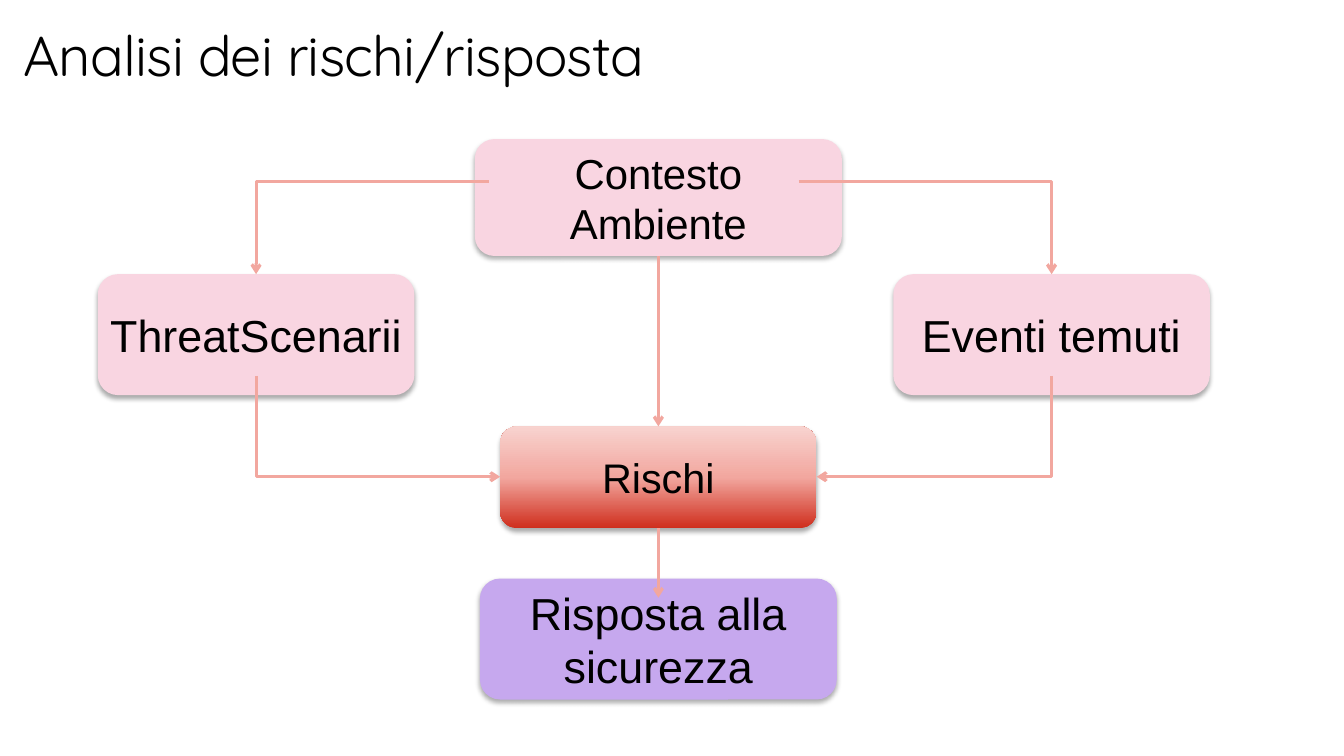
from lxml.etree import SubElement
from pptx import Presentation
from pptx.dml.color import RGBColor
from pptx.enum.shapes import MSO_CONNECTOR, MSO_SHAPE
from pptx.enum.text import MSO_ANCHOR, PP_ALIGN
from pptx.oxml.ns import qn
from pptx.util import Pt

PX = 9144  # 100 px to the inch
HUES = {"ink": "000000", "pink": "F9D5E1", "lilac": "C6A8EE",
        "line": "F2A79F", "red": "CF2E1D", "pale": "F8D3CF"}
RISK = [(0, "red"), (50, "line"), (100, "pale")]


def hue(name):
    return RGBColor.from_string(HUES[name])


def add_run(para, text, font, size):
    run = para.add_run()
    run.text = text
    run.font.name = font
    run.font.size = Pt(size)
    run.font.color.rgb = hue("ink")
    return run


def add_title(slide, text):
    title = slide.shapes.title
    title.left, title.top, title.width, title.height = (
        n * PX for n in (13, 1, 1150, 92))
    frame = title.text_frame
    frame.word_wrap = True
    frame.vertical_anchor = MSO_ANCHOR.BOTTOM
    para = frame.paragraphs[0]
    para.alignment = PP_ALIGN.LEFT
    para.line_spacing = 0.9
    run = add_run(para, text, "Quicksand", 40)
    run.font._element.set("spc", "-50")


def add_shade(shape):
    shape.shadow.inherit = False
    effects = shape._element.spPr.find(qn("a:effectLst"))
    shade = SubElement(effects, qn("a:outerShdw"), blurRad=str(Pt(3.5)),
                       dist=str(Pt(2.2)), dir="5400000", rotWithShape="0")
    tone = SubElement(shade, qn("a:srgbClr"), val=HUES["ink"])
    SubElement(tone, qn("a:alpha"), val="32000")


def blend(shape, stops):
    shape.fill.gradient()
    shape.fill.gradient_angle = 90
    group = shape._element.spPr.find(qn("a:gradFill")).find(qn("a:gsLst"))
    for old in list(group):
        group.remove(old)
    for pos, name in stops:
        stop = SubElement(group, qn("a:gs"), pos=str(pos * 1000))
        SubElement(stop, qn("a:srgbClr"), val=HUES[name])


def add_box(slide, place, lines, size, fill):
    box = slide.shapes.add_shape(MSO_SHAPE.ROUNDED_RECTANGLE,
                                 *(n * PX for n in place))
    if isinstance(fill, list):
        blend(box, fill)
    else:
        box.fill.solid()
        box.fill.fore_color.rgb = hue(fill)
    box.line.fill.background()
    add_shade(box)
    frame = box.text_frame
    frame.word_wrap = True
    frame.vertical_anchor = MSO_ANCHOR.MIDDLE
    frame.margin_left = frame.margin_right = 4 * PX
    frame.margin_top = frame.margin_bottom = 0
    for i, text in enumerate(lines):
        para = frame.add_paragraph() if i else frame.paragraphs[0]
        para.alignment = PP_ALIGN.CENTER
        add_run(para, text, "Arial", size)
    return box


def add_arrow(slide, start, end, kind=MSO_CONNECTOR.STRAIGHT):
    arrow = slide.shapes.add_connector(kind, *(n * PX for n in start + end))
    arrow.line.color.rgb = hue("line")
    arrow.line.width = Pt(2.25)
    SubElement(arrow.line._get_or_add_ln(), qn("a:tailEnd"), type="arrow")
    SubElement(arrow._element.spPr, qn("a:effectLst"))
    return arrow


def add_elbow(slide, start, end, down=False):
    """One bend: across then down, or down then across."""
    arrow = add_arrow(slide, start, end, MSO_CONNECTOR.ELBOW)
    props = arrow._element.spPr
    props.find(qn("a:prstGeom")).set("prst", "bentConnector2")
    if down:
        # Turn a quarter about the centre, with the sides swapped
        wide, high = arrow.width, arrow.height
        arrow.left += (wide - high) // 2
        arrow.top += (high - wide) // 2
        arrow.width, arrow.height = high, wide
        right = end[0] > start[0]
        frame = props.find(qn("a:xfrm"))
        frame.set("rot", "16200000" if right else "5400000")
        frame.set("flipH", "1" if right else "0")


def main():
    deck = Presentation()
    deck.slide_width, deck.slide_height = 1333 * PX, 750 * PX
    slide = deck.slides.add_slide(deck.slide_layouts[5])
    add_title(slide, "Analisi dei rischi/risposta")

    # Boxes
    scene = add_box(slide, (471, 138, 364, 116),
                    ["Contesto", "Ambiente"], 29.9, "pink")
    add_box(slide, (886, 272, 314, 120), ["Eventi temuti"], 32, "pink")
    add_box(slide, (97, 272, 314, 120), ["ThreatScenarii"], 32, "pink")
    risk = add_box(slide, (496, 423, 314, 101), ["Rischi"], 29.5, RISK)
    add_box(slide, (476, 574, 354, 120),
            ["Risposta alla sicurezza"], 32, "lilac")

    # Side paths: context to threat or event, then on to risk
    for side, out, into in ((254, 485, 496), (1043, 792, 810)):
        add_elbow(slide, (out, 180), (side, 272))
        add_elbow(slide, (side, 373), (into, 473), down=True)

    # Middle path
    drop = add_arrow(slide, (653, 254), (653, 423))
    drop.begin_connect(scene, 2)
    drop.end_connect(risk, 0)
    reply = add_arrow(slide, (653, 524), (653, 593))
    reply.begin_connect(risk, 2)

    deck.save("out.pptx")


if __name__ == "__main__":
    main()
